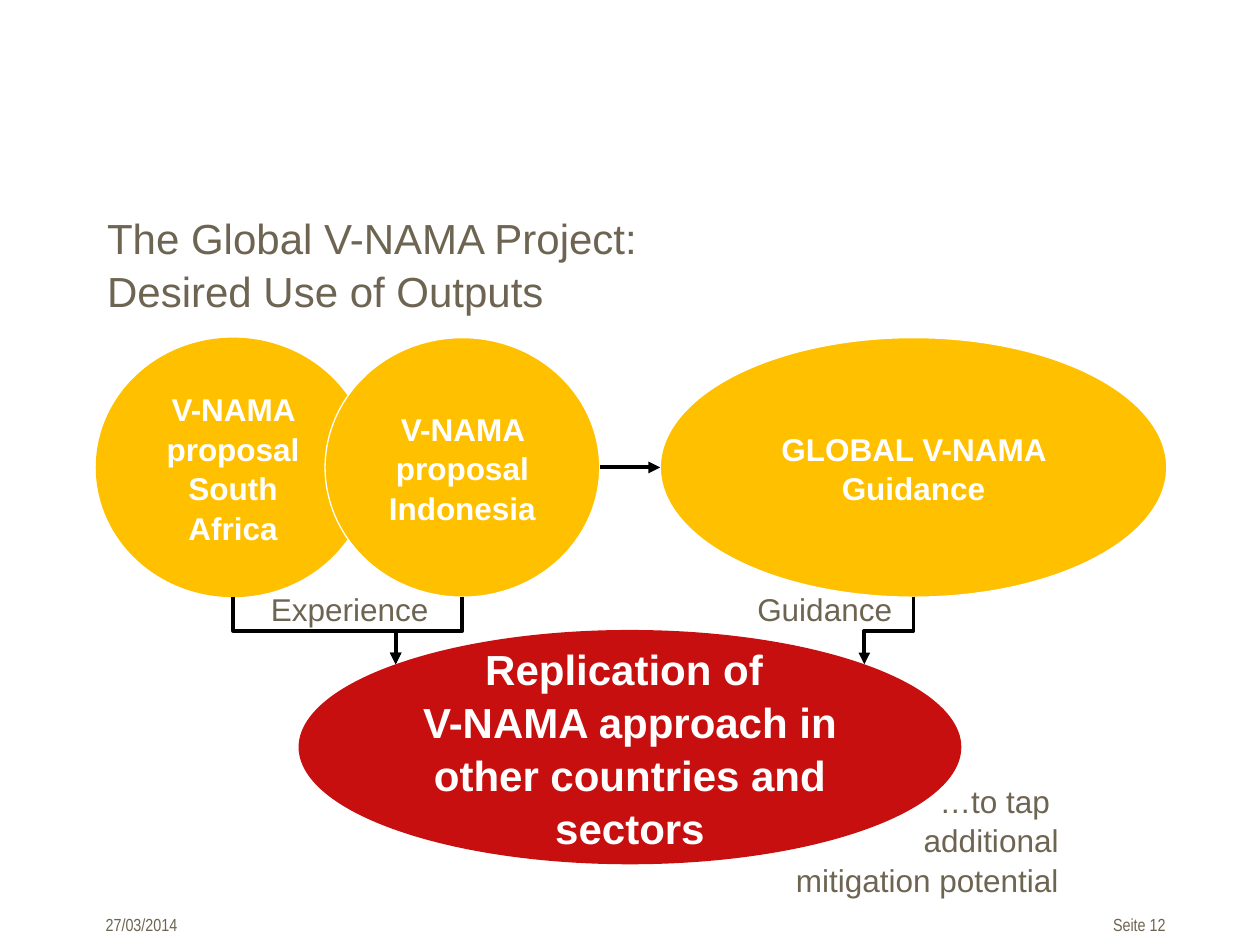
import dataclasses

import lxml.etree
import pptx
import pptx.dml.color
import pptx.enum.shapes
import pptx.enum.text
import pptx.oxml.ns
import pptx.util

Inches = pptx.util.Inches
Pt = pptx.util.Pt
qn = pptx.oxml.ns.qn
RGBColor = pptx.dml.color.RGBColor
Align = pptx.enum.text.PP_ALIGN
Anchor = pptx.enum.text.MSO_ANCHOR
Connector = pptx.enum.shapes.MSO_CONNECTOR


@dataclasses.dataclass(frozen=True)
class Theme:
    """Colours, fonts and type sizes of the slide."""

    text: RGBColor = RGBColor(0x6E, 0x64, 0x52)
    white: RGBColor = RGBColor(0xFF, 0xFF, 0xFF)
    arrow: RGBColor = RGBColor(0, 0, 0)
    output: RGBColor = RGBColor(0xFF, 0xC0, 0x00)
    goal: RGBColor = RGBColor(0xC8, 0x0F, 0x0F)
    font: str = "Arial"
    footer_font: str = "Arial Narrow"
    large: int = Pt(24)
    medium: int = Pt(18)
    small: int = Pt(10)


@dataclasses.dataclass(frozen=True)
class Box:
    """A rectangle measured in inches."""

    left: float
    top: float
    width: float
    height: float

    def lengths(self):
        """Return left, top, width and height as lengths."""
        return [Inches(value) for value in dataclasses.astuple(self)]

    def point(self, across, down):
        """Return the point at the given fractions of the box."""
        return self.left + across * self.width, self.top + down * self.height


THEME = Theme()


def set_values(target, values):
    """Set attributes from a dict of format values."""
    for name, value in values.items():
        setattr(target, name, value)


def write_text(shape, text, align=Align.LEFT, anchor=Anchor.TOP, frame=None, **font):
    """Fill a shape with evenly formatted paragraphs."""
    text_frame = shape.text_frame
    text_frame.text = text
    set_values(text_frame, {
        "word_wrap": True,
        "auto_size": pptx.enum.text.MSO_AUTO_SIZE.NONE,
        "vertical_anchor": anchor,
        **(frame or {}),
    })
    font_values = {"name": THEME.font, "size": THEME.medium, "bold": False, **font}
    color = font_values.pop("color", THEME.text)
    for paragraph in text_frame.paragraphs:
        set_values(paragraph, {"alignment": align, "line_spacing": 1.05,
                               "space_before": Pt(0)})
        for run in paragraph.runs:
            set_values(run.font, font_values)
            run.font.color.rgb = color


def place_placeholder(shape, box):
    """Move a placeholder into a box."""
    set_values(shape, dict(zip(("left", "top", "width", "height"), box.lengths())))


def add_label(slide, box, text, **values):
    """Add a text box that fills a box."""
    write_text(slide.shapes.add_textbox(*box.lengths()), text, **values)


def add_title(slide, box):
    """Place the slide title."""
    place_placeholder(slide.shapes.title, box)
    write_text(slide.shapes.title, "The Global V-NAMA Project:\vDesired Use of Outputs",
               size=THEME.large)


def add_experience(slide, box):
    """Place the body text without a bullet."""
    body = slide.placeholders[1]
    place_placeholder(body, box)
    body.text_frame.text = "Experience"
    properties = body.text_frame.paragraphs[0]._p.get_or_add_pPr()
    properties.set("marL", "0")
    properties.set("indent", "0")
    lxml.etree.SubElement(properties, qn("a:buNone"))
    paragraph = body.text_frame.paragraphs[0]
    set_values(paragraph, {"alignment": Align.CENTER, "line_spacing": 1.05,
                           "space_before": Pt(0)})
    set_values(body.text_frame, {"vertical_anchor": Anchor.TOP,
                                 "auto_size": pptx.enum.text.MSO_AUTO_SIZE.NONE})
    set_values(paragraph.font, {"name": THEME.font, "size": THEME.medium})
    paragraph.font.color.rgb = THEME.text


def add_ellipse(slide, box, text, fill, outlined=False, size=THEME.medium):
    """Add a filled ellipse with bold white text."""
    ellipse = slide.shapes.add_shape(pptx.enum.shapes.MSO_SHAPE.OVAL, *box.lengths())
    ellipse.shadow.inherit = False
    ellipse.fill.solid()
    ellipse.fill.fore_color.rgb = fill
    if outlined:
        ellipse.line.color.rgb = THEME.white
        ellipse.line.width = Pt(0.75)
    else:
        ellipse.line.fill.background()
    write_text(ellipse, text, Align.CENTER, Anchor.MIDDLE,
               size=size, bold=True, color=THEME.white)


def add_arrow(slide, start, end):
    """Add a straight arrow, or an elbow that leaves downwards."""
    (start_x, start_y), (end_x, end_y) = start, end
    across, down = abs(end_x - start_x), end_y - start_y
    if down == 0:
        connector = slide.shapes.add_connector(
            Connector.STRAIGHT, *map(Inches, (*start, *end)))
    else:
        left = (start_x + end_x - down) / 2
        top = (start_y + end_y - across) / 2
        connector = slide.shapes.add_connector(
            Connector.ELBOW, *map(Inches, (left, top, left + down, top + across)))
        transform = connector.element.spPr.find(qn("a:xfrm"))
        rightwards = end_x > start_x
        transform.set("rot", str((270 if rightwards else 90) * 60000))
        if rightwards:
            transform.set("flipH", "1")
    connector.line.color.rgb = THEME.arrow
    connector.line.width = Pt(2.25)
    properties = connector.element.spPr
    lxml.etree.SubElement(properties.find(qn("a:ln")), qn("a:tailEnd"), type="triangle")
    lxml.etree.SubElement(properties, qn("a:effectLst"))


def add_diagram(slide, box):
    """Draw the outputs, the goal and the arrows between them."""
    south_africa = Box(box.left, box.top, 2.18, 2.06)
    indonesia = Box(box.left + 1.82, box.top, 2.18, 2.06)
    guidance = Box(box.left + box.width - 4.02, box.top, 4.02, 2.06)
    goal = Box(box.left + 1.61, box.top + box.height - 1.86, 5.26, 1.86)
    add_ellipse(slide, south_africa, "V-NAMA proposal South Africa", THEME.output)
    add_ellipse(slide, indonesia, "V-NAMA proposal Indonesia", THEME.output, True)
    add_ellipse(slide, guidance, "GLOBAL V-NAMA Guidance", THEME.output, True)
    add_ellipse(slide, goal,
                "Replication of \vV-NAMA approach in other countries and sectors",
                THEME.goal, size=THEME.large)
    near, far = 0.5 - 0.5 ** 1.5, 0.5 + 0.5 ** 1.5
    for source, side in ((south_africa, near), (indonesia, near), (guidance, far)):
        add_arrow(slide, source.point(0.5, 1), goal.point(side, near))
    add_label(slide, Box(box.left + 4.86, box.top + 1.94, 1.85, 0.43), "Guidance",
              align=Align.CENTER)
    add_label(slide, Box(box.left + 5.23, box.top + 3.46, 2.51, 1.01),
              "…to tap \nadditional\nmitigation potential", align=Align.RIGHT)
    add_arrow(slide, indonesia.point(1, 0.5), guidance.point(0, 0.5))


def add_footer(slide, box):
    """Place the date on the left and the page on the right."""
    style = {"name": THEME.footer_font, "size": THEME.small}
    add_label(slide, Box(box.left, box.top, 1.42, box.height), "27/03/2014", **style)
    add_label(slide, Box(box.left + box.width - 1.01, box.top, 1.01, box.height),
              "Seite 12", align=Align.RIGHT, frame={"margin_right": 0}, **style)


def main():
    """Build and save the presentation."""
    presentation = pptx.Presentation()
    presentation.slide_width, presentation.slide_height = Inches(10), Inches(7.5)
    slide = presentation.slides.add_slide(presentation.slide_layouts[1])
    add_title(slide, Box(0.75, 1.62, 8.5, 0.68))
    add_experience(slide, Box(1.85, 4.62, 1.85, 0.43))
    add_diagram(slide, Box(0.76, 2.68, 8.5, 4.18))
    add_footer(slide, Box(0.74, 7.2, 8.51, 0.27))
    presentation.save("out.pptx")


if __name__ == "__main__":
    main()
